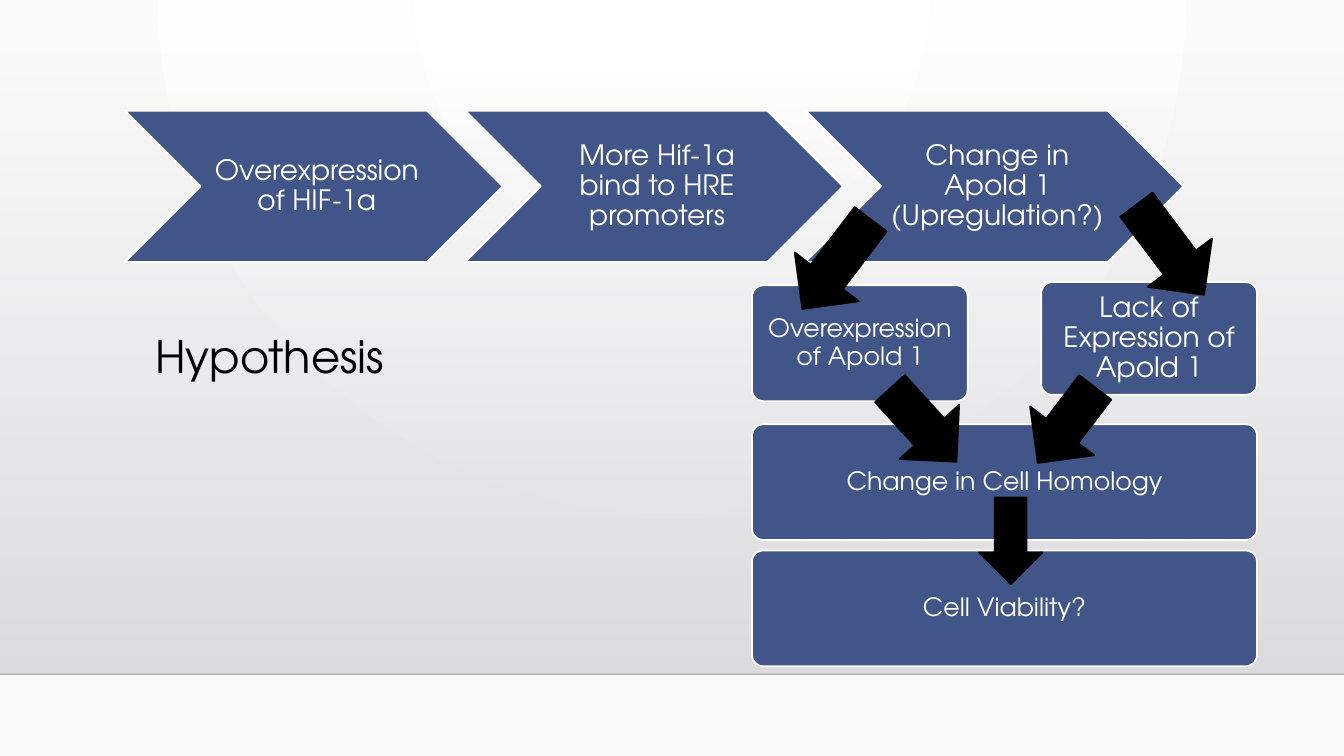
from pptx import Presentation
from pptx.dml.color import RGBColor
from pptx.enum.shapes import MSO_CONNECTOR as Link, MSO_SHAPE as Form
from pptx.enum.text import MSO_ANCHOR as Anchor, PP_ALIGN as Align
from pptx.oxml import parse_xml
from pptx.oxml.ns import nsdecls, qn
from pptx.util import Cm, Pt

FONT = "TeX Gyre Adventor"
BLUE, WHITE, BLACK = "415588", "FFFFFF", "000000"


def color(code):
    """Turn a hex string into a colour."""
    return RGBColor.from_string(code)


def blend(fill, root, first, last, alpha, shade):
    """Give the fill under root a two-stop gradient with the given shading."""
    fill.gradient()
    old = root.find(".//" + qn("a:gradFill"))
    new = parse_xml(
        f'<a:gradFill {nsdecls("a")} rotWithShape="1"><a:gsLst>'
        f'<a:gs pos="0"><a:srgbClr val="{first}"><a:alpha val="{alpha}"/></a:srgbClr></a:gs>'
        f'<a:gs pos="100000"><a:srgbClr val="{last}"/></a:gs>'
        f'</a:gsLst>{shade}</a:gradFill>')
    old.getparent().replace(old, new)


def write(shape, text, size, code, align, inset):
    """Set the text of a shape and format it."""
    frame = shape.text_frame
    frame.text = text
    frame.word_wrap = True
    frame.margin_left, frame.margin_right, frame.margin_top, frame.margin_bottom = map(Cm, inset)
    para = frame.paragraphs[0]
    para.alignment = align
    para.line_spacing = 0.9
    font = para.runs[0].font
    font.name, font.size = FONT, Pt(size)
    font.color.rgb = color(code)


def block(slide, form, box, fill, line):
    """Draw a filled and outlined shape in the box."""
    shape = slide.shapes.add_shape(form, *map(Cm, box))
    shape.shadow.inherit = False
    shape.fill.solid()
    shape.fill.fore_color.rgb = color(fill)
    shape.line.color.rgb = color(line)
    shape.line.width = Pt(1.25)
    return shape


def backdrop(slide, wide, floor):
    """Paint the background, the shaded wall and the floor line."""
    blend(slide.background.fill, slide.element, "FFFFFF", "FAFAFA", 100000,
          '<a:path path="circle"><a:fillToRect l="43000" r="43000" b="100000"/></a:path>')
    top = 1.3
    wall = slide.shapes.add_shape(Form.RECTANGLE, 0, Cm(top), Cm(wide), Cm(floor - top))
    wall.shadow.inherit = False
    wall.line.fill.background()
    blend(wall.fill, wall.element, "DCDCE0", "DEDEE2", 0, '<a:lin ang="5400000" scaled="0"/>')
    edge = slide.shapes.add_connector(Link.STRAIGHT, 0, Cm(floor), Cm(wide), Cm(floor))
    edge.line.color.rgb = color("000001")
    edge.line.width = Pt(1)
    tint = edge.element.find(".//" + qn("a:srgbClr"))
    tint.append(parse_xml(f'<a:alpha {nsdecls("a")} val="20000"/>'))
    edge.element.spPr.append(parse_xml(f'<a:effectLst {nsdecls("a")}/>'))


def title(slide, box, text):
    """Place the slide title."""
    label = slide.shapes.add_textbox(*map(Cm, box))
    write(label, text, 32, BLACK, Align.LEFT, (0.25, 0.25, 0.13, 0.13))
    label.text_frame.vertical_anchor = Anchor.TOP


def chain(slide, box, steps):
    """Spread equal chevrons over the box, one for each step."""
    left, top, wide, high = box
    width = 9.52
    pitch = (wide - width) / (len(steps) - 1)
    for i, step in enumerate(steps):
        shape = block(slide, Form.CHEVRON, (left + i * pitch, top, width, high), BLUE, WHITE)
        write(shape, step, 20, WHITE, Align.CENTER, (0.23, 0.08, 0.08, 0.08))


def effects(slide, box):
    """Stack the outcome cards in the box."""
    left, top, wide, high = box
    half, tall = 5.44, 2.92
    low = high - tall
    cards = [
        ("Lack of Expression of Apold 1", 20, wide - half, 0, half, 2.84),
        ("Overexpression of Apold 1", 18, 0, 0.08, half, tall),
        ("Change in Cell Homology", 18, 0, low - 3.18, wide, tall),
        ("Cell Viability?", 18, 0, low, wide, tall),
    ]
    for text, size, x, y, w, h in cards:
        card = block(slide, Form.ROUNDED_RECTANGLE, (left + x, top + y, w, h), BLUE, WHITE)
        card.adjustments[0] = 0.1
        write(card, text, size, WHITE, Align.CENTER, (0.08,) * 4)


def arrows(slide, box):
    """Point arrows from the chain down through the cards in the box."""
    left, top = box[:2]
    marks = [
        (0.71, -1.47, 2.84, 2.03, 127.3),
        (9.12, -1.83, 2.84, 2.03, 53.1),
        (3.07, 2.59, 2.49, 2.03, 47.7),
        (6.73, 2.59, 2.39, 2.03, 127.3),
        (5.43, 5.72, 2.18, 1.6, 90),
    ]
    for x, y, w, h, turn in marks:
        arrow = block(slide, Form.RIGHT_ARROW, (left + x, top + y, w, h), BLACK, BLACK)
        arrow.rotation = turn


def main():
    """Build the slide and save it."""
    deck = Presentation()
    deck.slide_width, deck.slide_height = Cm(33.87), Cm(19.05)
    slide = deck.slides.add_slide(deck.slide_layouts[6])
    backdrop(slide, 33.87, 16.99)
    title(slide, (3.66, 8.31, 7.62, 2.11), "Hypothesis")
    chain(slide, (3.15, 2.79, 26.67, 3.81), [
        "Overexpression of HIF-1a",
        "More Hif-1a bind to HRE promoters",
        "Change in Apold 1 (Upregulation?)",
    ])
    area = (18.95, 7.11, 12.73, 9.68)
    effects(slide, area)
    arrows(slide, area)
    deck.save("out.pptx")


if __name__ == "__main__":
    main()
